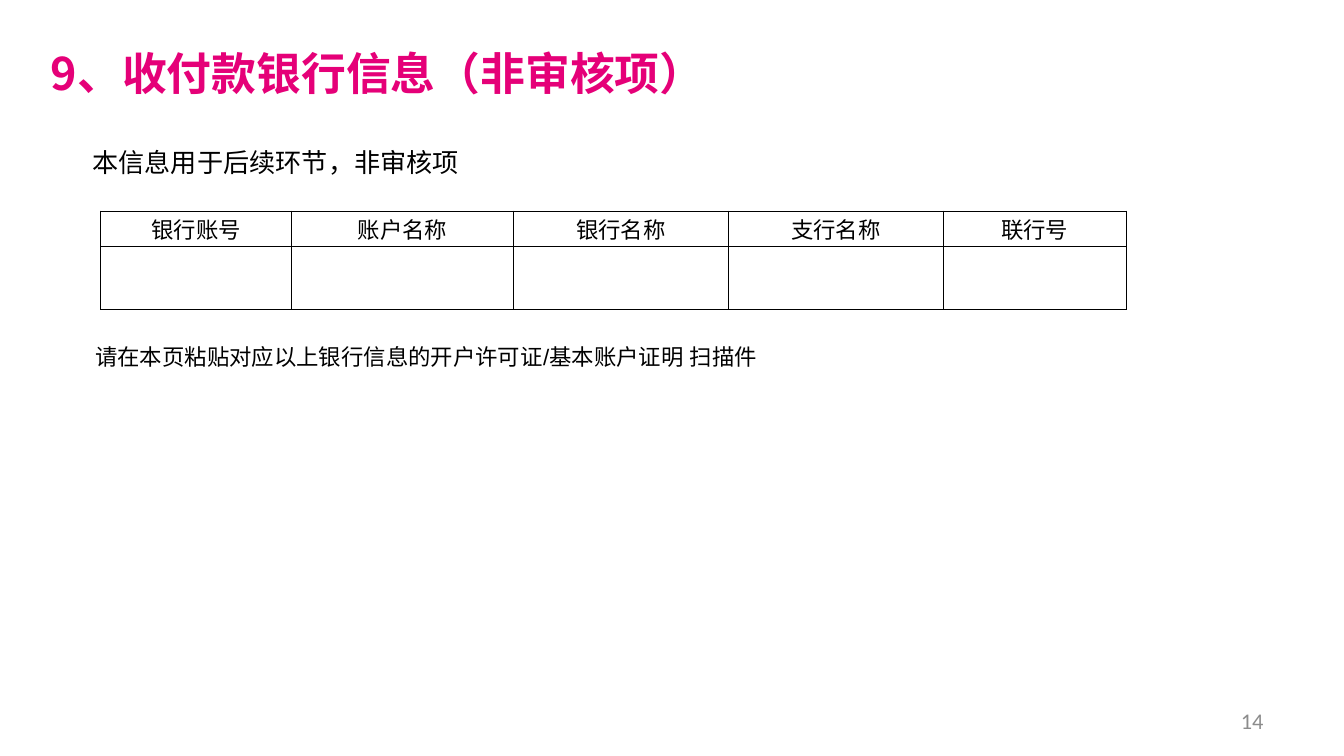
from dataclasses import dataclass

from lxml.etree import SubElement
from pptx import Presentation
from pptx.dml.color import RGBColor
from pptx.enum.text import MSO_ANCHOR as Anchor, PP_ALIGN as Align
from pptx.oxml.ns import qn
from pptx.util import Inches, Pt


@dataclass(frozen=True)
class Theme:
    """Colours, fonts and type sizes of the slide."""
    accent: str = "E50078"
    ink: str = "000000"
    muted: str = "8C8C8C"
    paper: str = "FFFFFF"
    cjk: str = "Noto Sans CJK SC"
    latin: str = "Arial"
    number: str = "Calibri"
    title: int = 24
    body: int = 14
    small: int = 12


THEME = Theme()


def style_text(frame, size, font, color=THEME.ink, bold=False, align=Align.LEFT):
    """Format every run of a text frame."""
    for paragraph in frame.paragraphs:
        paragraph.alignment = align
        for run in paragraph.runs:
            run.font.size = Pt(size)
            run.font.name = font
            run.font.bold = bold
            run.font.color.rgb = RGBColor.from_string(color)
            SubElement(run.font._element, qn("a:ea"), typeface=font)


def add_text(slide, text, box, size, font, anchor=Anchor.TOP, **style):
    """Add a wrapped text box and return its text frame."""
    frame = slide.shapes.add_textbox(*map(Inches, box)).text_frame
    frame.word_wrap = True
    frame.vertical_anchor = anchor
    frame.text = text
    style_text(frame, size, font, **style)
    return frame


def border_cell(cell):
    """Draw a thin line on all four sides of a cell."""
    properties = cell._tc.get_or_add_tcPr()
    for position, side in enumerate(("lnL", "lnR", "lnT", "lnB")):
        line = SubElement(properties, qn(f"a:{side}"), w=str(Pt(0.5)))
        fill = SubElement(line, qn("a:solidFill"))
        SubElement(fill, qn("a:srgbClr"), val=THEME.ink)
        properties.insert(position, line)


def add_bank_table(slide, headings, widths, heights, left, top):
    """Add the bank details table with an empty row to fill in."""
    size = (left, top, sum(widths), sum(heights))
    table = slide.shapes.add_table(len(heights), len(widths), *map(Inches, size)).table
    table.first_row = table.horz_banding = False
    for column, width in zip(table.columns, widths):
        column.width = Inches(width)
    for row, height in zip(table.rows, heights):
        row.height = Inches(height)
    for cell in table.iter_cells():
        cell.fill.solid()
        cell.fill.fore_color.rgb = RGBColor.from_string(THEME.paper)
        border_cell(cell)
    for cell, heading in zip(table.rows[0].cells, headings):
        cell.text = heading
        cell.vertical_anchor = Anchor.MIDDLE
        cell.margin_left = cell.margin_right = cell.margin_top = Inches(0.01)
        cell.margin_bottom = Inches(0.05)
        style_text(cell.text_frame, THEME.small, THEME.cjk, align=Align.CENTER)


def main():
    """Build and save the bank information slide."""
    deck = Presentation()
    deck.slide_width = Inches(10)
    deck.slide_height = Inches(10) * 9 // 16
    slide = deck.slides.add_slide(deck.slide_layouts[6])

    add_text(slide, "9、收付款银行信息（非审核项）", (0.28, 0.29, 8.19, 0.62),
             THEME.title, THEME.cjk, color=THEME.accent, bold=True)
    add_text(slide, "14", (7.17, 5.21, 2.33, 0.3), THEME.small, THEME.number,
             Anchor.MIDDLE, color=THEME.muted, align=Align.RIGHT)
    purpose = add_text(slide, "本信息用于后续环节，非审核项", (0.59, 0.92, 3.07, 0.41),
                       THEME.body, THEME.cjk)
    purpose.paragraphs[0].line_spacing = 1.5
    add_bank_table(slide, ("银行账号", "账户名称", "银行名称", "支行名称", "联行号"),
                   (1.42, 1.65, 1.6, 1.6, 1.36), (0.26, 0.47), 0.75, 1.57)
    add_text(slide, "请在本页粘贴对应以上银行信息的开户许可证/基本账户证明 扫描件",
             (0.61, 2.5, 5.18, 0.3), THEME.small, THEME.latin, Anchor.MIDDLE)

    deck.save("out.pptx")


if __name__ == "__main__":
    main()
